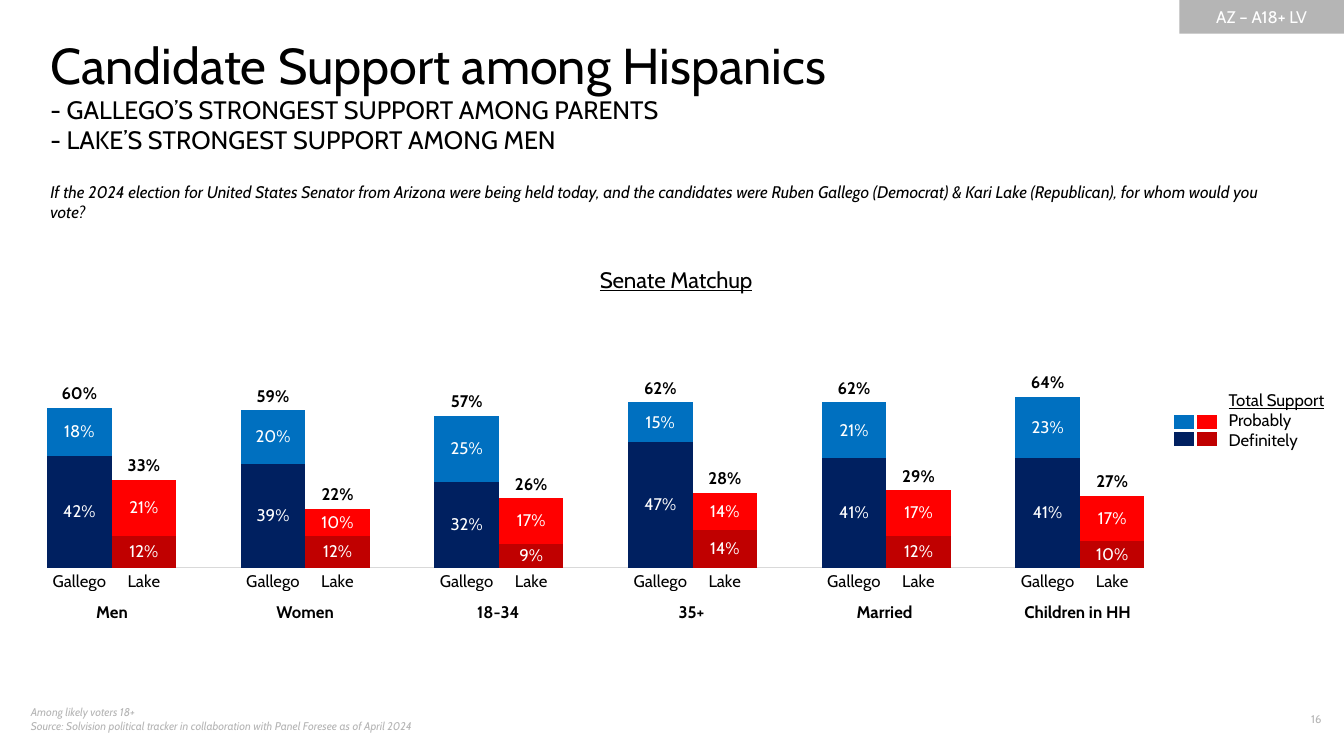
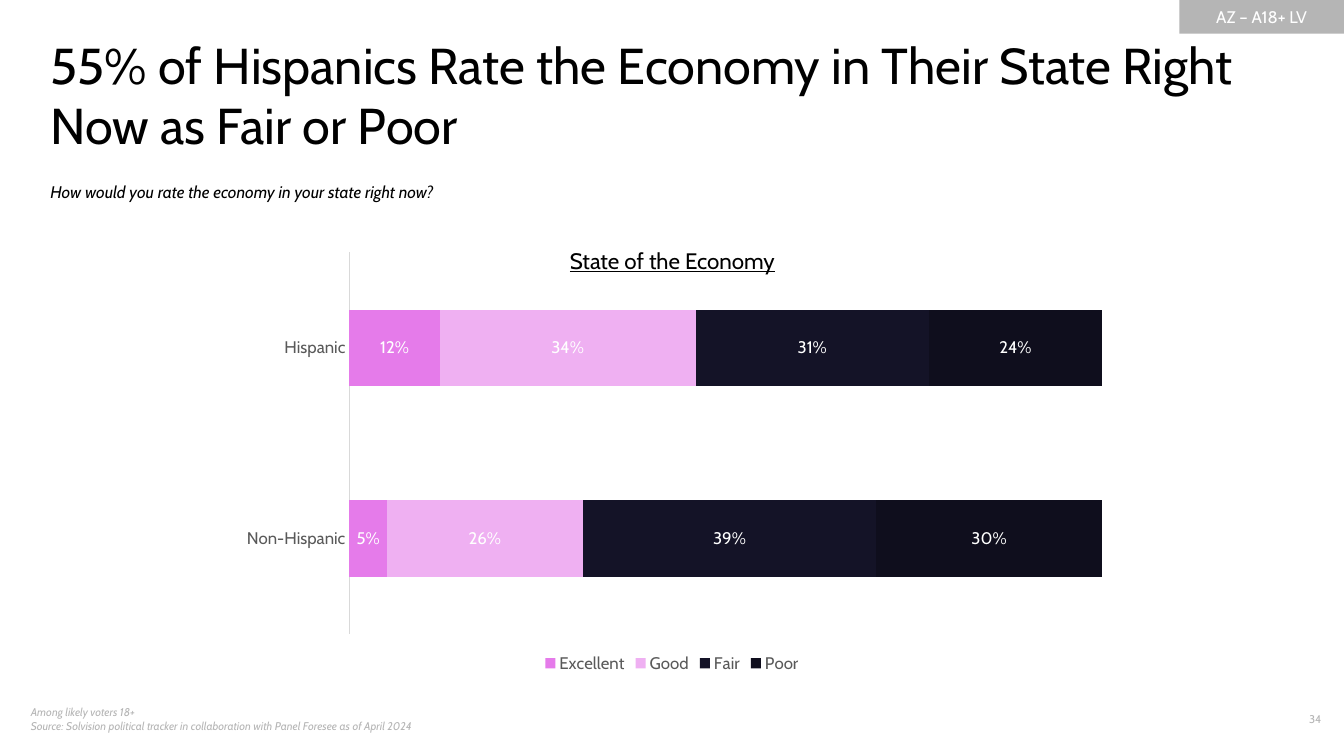
from lxml import etree
from pptx import Presentation
from pptx.chart.data import CategoryChartData
from pptx.dml.color import RGBColor
from pptx.enum.chart import XL_CHART_TYPE, XL_LABEL_POSITION, XL_LEGEND_POSITION, XL_TICK_MARK
from pptx.enum.shapes import MSO_SHAPE
from pptx.enum.text import MSO_ANCHOR, PP_ALIGN
from pptx.oxml.ns import qn
from pptx.util import Pt

COLUMN, BAR = XL_CHART_TYPE.COLUMN_STACKED, XL_CHART_TYPE.BAR_STACKED
MID, BASE = XL_LABEL_POSITION.CENTER, XL_LABEL_POSITION.INSIDE_BASE
BOTTOM, NO_TICK = XL_LEGEND_POSITION.BOTTOM, XL_TICK_MARK.NONE
RECT, MIDDLE, TOP = MSO_SHAPE.RECTANGLE, MSO_ANCHOR.MIDDLE, MSO_ANCHOR.TOP
LEFT, CENTER, RIGHT = PP_ALIGN.LEFT, PP_ALIGN.CENTER, PP_ALIGN.RIGHT

FONT = "Cabin"
BLACK, WHITE, GRAY, SLATE, RULE = "000000", "FFFFFF", "B5B5B5", "595959", "D9D9D9"
NAVY, BLUE, MAROON, RED = "002060", "0070C0", "C00000", "FF0000"
SOURCE = ("Among likely voters 18+\nSource: Solvision political tracker "
          "in collaboration with Panel Foresee as of April 2024")

GROUPS = ["Men", "Women", "18-34", "35+", "Married", "Children in HH"]
FIRM = [(.42, .12), (.39, .12), (.32, .09), (.47, .14), (.41, .12), (.41, .1)]
LEAN = [(.18, .21), (.2, .1), (.25, .17), (.15, .14), (.21, .17), (.23, .17)]
RATINGS = [("Excellent", (.12, .05), "E57BEA"), ("Good", (.34, .26), "EFB0F2"),
           ("Fair", (.31, .39), "141327"), ("Poor", (.24, .3), "0F0E1D")]


def rgb(code):
    """Turn a hex string into a colour."""
    return RGBColor.from_string(code)


def paint(fill, code):
    """Give a fill one solid colour."""
    fill.solid()
    fill.fore_color.rgb = rgb(code)


def style(font, size=12, color=BLACK, bold=False, italic=False, under=False):
    """Set every shared property of a font."""
    font.name, font.size = FONT, Pt(size)
    font.bold, font.italic, font.underline = bold, italic, under
    font.color.rgb = rgb(color)


def write(frame, text, align=LEFT, **look):
    """Add each line of the text as a paragraph."""
    for line in text.split("\n"):
        para = frame.paragraphs[-1]
        if para.runs:
            para = frame.add_paragraph()
        para.alignment = align
        run = para.add_run()
        run.text = line
        style(run.font, **look)


def box(slide, area, anchor=TOP, inset=True):
    """Add a wrapping text box and return its frame."""
    frame = slide.shapes.add_textbox(*map(Pt, area)).text_frame
    frame.word_wrap, frame.vertical_anchor = True, anchor
    if not inset:
        frame.margin_left = frame.margin_right = 0
        frame.margin_top = frame.margin_bottom = 0
    return frame


def begin(deck, title, ask, page, sub=None):
    """Add a slide with its tag, footer, title and question."""
    slide = deck.slides.add_slide(deck.slide_layouts[6])
    tag = slide.shapes.add_shape(RECT, Pt(842.4), 0, Pt(117.6), Pt(24))
    tag.shadow.inherit = False
    paint(tag.fill, GRAY)
    tag.line.fill.background()
    tag.text_frame.vertical_anchor = MIDDLE
    write(tag.text_frame, "AZ – A18+ LV", align=CENTER, color=WHITE)
    write(box(slide, (15, 500.4, 368, 29)), SOURCE, size=8, color=GRAY, italic=True)
    write(box(slide, (888, 505.5, 63, 19)), page, align=RIGHT, size=8, color=GRAY)
    head = box(slide, (36, 24, 864, 87), inset=False)
    write(head, title, size=36)
    if sub:
        write(head, sub, size=18)
    write(box(slide, (36, 129.6, 864, 29), inset=False), ask, italic=True)
    return slide


def place(part, target=None, **spots):
    """Fix a chart part at fractions of the chart area."""
    layout = part.find(qn("c:layout"))
    if layout is None:
        layout = etree.Element(qn("c:layout"))
        part.insert(0, layout)
    manual = etree.SubElement(layout, qn("c:manualLayout"))
    rows = [("layoutTarget", target)] if target else []
    rows += [("xMode", "edge"), ("yMode", "edge"), *spots.items()]
    for name, value in rows:
        etree.SubElement(manual, qn("c:" + name)).set("val", str(value))


def graph(slide, kind, area, cats, rows, gap, ink, spots):
    """Add a stacked percent chart and return it."""
    data = CategoryChartData(number_format="0%")
    data.categories = cats
    for name, values in rows:
        data.add_series(name, values)
    chart = slide.shapes.add_chart(kind, *map(Pt, area), data).chart
    style(chart.font, size=10)
    chart.has_title = chart.has_legend = False
    plot = chart.plots[0]
    plot.gap_width, plot.overlap, plot.vary_by_categories = gap, 100, False
    axis = chart.category_axis
    axis.major_tick_mark = axis.minor_tick_mark = NO_TICK
    axis.format.line.color.rgb = rgb(RULE)
    axis.format.line.width = Pt(0.75)
    style(axis.tick_labels.font, color=ink)
    scale = chart.value_axis
    scale.minimum_scale, scale.maximum_scale = 0, 1
    scale.has_major_gridlines = scale.visible = False
    place(plot._element.getparent(), "inner", **spots)
    return chart


def label(series, spot=MID, **look):
    """Show the values of a series as percentages."""
    tags = series.data_labels
    tags.show_value, tags.position = True, spot
    tags.number_format, tags.number_format_is_linked = "0%", False
    style(tags.font, **look)


def spread(pairs):
    """Join value pairs with a gap between groups."""
    return [v for pair in pairs for v in (*pair, None)][:-1]


def grid(slide, area, rows, cols):
    """Add a plain table with tight, clear cells."""
    table = slide.shapes.add_table(rows, cols, *map(Pt, area)).table
    table.first_row = table.horz_banding = False
    for cell in table.iter_cells():
        cell.margin_left = cell.margin_right = 0
        cell.margin_top = cell.margin_bottom = 0
        cell.vertical_anchor = MIDDLE
        cell.fill.background()
    return table


def edge(cell, code, width):
    """Draw all four borders of a cell."""
    props = cell._tc.get_or_add_tcPr()
    for spot, side in enumerate(("lnL", "lnR", "lnT", "lnB")):
        line = etree.Element(qn("a:" + side), w=str(Pt(width)))
        fill = etree.SubElement(line, qn("a:solidFill"))
        etree.SubElement(fill, qn("a:srgbClr"), val=code)
        props.insert(spot, line)


def key(slide):
    """Add the colour key and its words."""
    words = box(slide, (870.5, 270, 89.5, 60), MIDDLE)
    write(words, "Total Support", under=True)
    write(words, "Probably\nDefinitely")
    table = grid(slide, (837.5, 295.2, 33, 24.6), 2, 2)
    for cell, code in zip(table.iter_cells(), (BLUE, RED, NAVY, MAROON)):
        edge(cell, WHITE, 3)
        paint(cell.fill, code)
        cell.text_frame.paragraphs[0]._p.get_or_add_endParaRPr().set("sz", "100")


def support(deck):
    """Build the candidate support slide."""
    slide = begin(
        deck, "Candidate Support among Hispanics",
        "If the 2024 election for United States Senator from Arizona were being held "
        "today, and the candidates were Ruben Gallego (Democrat) & Kari Lake "
        "(Republican), for whom would you vote?", "16",
        "- GALLEGO’S STRONGEST SUPPORT AMONG PARENTS\n"
        "- LAKE’S STRONGEST SUPPORT AMONG MEN")
    total = [[round(a + b, 2) for a, b in zip(*two)] for two in zip(FIRM, LEAN)]
    rows = [("Definitely", spread(FIRM)), ("Probably", spread(LEAN)),
            ("Total Support", spread(total))]
    cats = (["Gallego", "Lake", " "] * len(GROUPS))[:-1]
    chart = graph(slide, COLUMN, (24.5, 173.5, 911.5, 258), cats, rows, 0, BLACK,
                  dict(x=.01, y=.16, w=.86, h=.74))
    chart.has_title = True
    write(chart.chart_title.text_frame, "Senate Matchup", align=CENTER,
          size=16, under=True)
    place(chart.chart_title._element, x=.44, y=.05)
    firm, lean, whole = chart.plots[0].series
    for series, codes in ((firm, (NAVY, MAROON)), (lean, (BLUE, RED))):
        label(series, color=WHITE)
        for start in range(0, len(cats), 3):
            for step, code in enumerate(codes):
                paint(series.points[start + step].format.fill, code)
    whole.format.fill.background()
    label(whole, BASE, bold=True)
    table = grid(slide, (34, 422.6, 782, 29.5), 1, 2 * len(GROUPS) - 1)
    for spot, column in enumerate(table.columns):
        column.width = Pt(46 if spot % 2 else 92)
    for spot, name in enumerate(GROUPS):
        write(table.cell(0, 2 * spot).text_frame, name, align=CENTER, bold=True)
    key(slide)


def economy(deck):
    """Build the state of the economy slide."""
    slide = begin(
        deck, "55% of Hispanics Rate the Economy in Their State Right Now as Fair or Poor",
        "How would you rate the economy in your state right now?", "34")
    rows = [(name, values) for name, values, code in RATINGS]
    chart = graph(slide, BAR, (160, 174.2, 640, 309.6), ["Hispanic", "Non-Hispanic"],
                  rows, 150, SLATE, dict(x=.14, y=.02, w=.84, h=.88))
    chart.category_axis.reverse_order = True
    chart.has_legend = True
    chart.legend.position, chart.legend.include_in_layout = BOTTOM, False
    style(chart.legend.font, color=SLATE)
    for series, (name, values, code) in zip(chart.plots[0].series, RATINGS):
        paint(series.format.fill, code)
        label(series, color=WHITE)
    write(box(slide, (302.4, 157, 355.6, 58.4), MIDDLE), "State of the Economy",
          align=CENTER, size=16, under=True)


def main():
    """Build and save the deck."""
    deck = Presentation()
    deck.slide_width, deck.slide_height = Pt(960), Pt(540)
    support(deck)
    economy(deck)
    deck.save("out.pptx")


if __name__ == "__main__":
    main()
